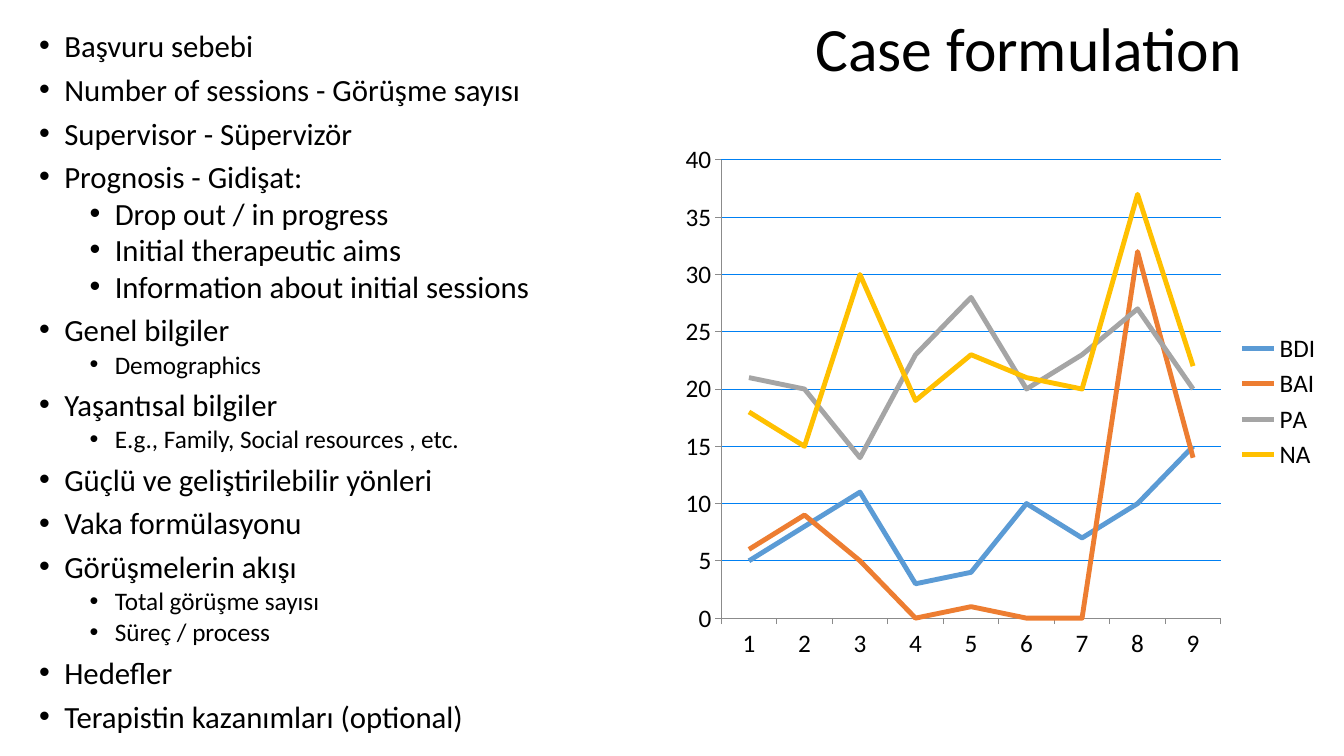
import pptx
import pptx.util
import pptx.chart.data
import pptx.dml.color
import pptx.enum.chart
import pptx.enum.text
import lxml.etree
from pptx.util import Inches

COLORS = {
    "text": "000000", "grid": "0080F3", "axis": "8B8B8B",
    "BDI": "5B9BD5", "BAI": "ED7D31", "PA": "A5A5A5", "NA": "FFC000",
}
FONT = "Calibri"


def rgb(name):
    return pptx.dml.color.RGBColor.from_string(COLORS[name])


def write(frame, text, size=22, level=0, bullet=False, line=0.8, before=0, align="LEFT"):
    paragraph = frame.paragraphs[0]
    if paragraph.runs:
        paragraph = frame.add_paragraph()
    paragraph.level = level
    paragraph.alignment = getattr(pptx.enum.text.PP_ALIGN, align)
    paragraph.line_spacing = line
    paragraph.space_before = pptx.util.Pt(before)
    run = paragraph.add_run()
    run.text = text
    run.font.size = pptx.util.Pt(size)
    run.font.name = FONT
    run.font.color.rgb = rgb("text")
    if bullet:
        properties = paragraph._p.get_or_add_pPr()
        properties.set("marL", str(Inches(0.25 + 0.5 * level)))
        properties.set("indent", str(Inches(-0.25)))
        namespace = "{http://schemas.openxmlformats.org/drawingml/2006/main}"
        lxml.etree.SubElement(properties, namespace + "buFont", typeface="Arial")
        lxml.etree.SubElement(properties, namespace + "buChar", char="•")


deck = pptx.Presentation()
deck.slide_width = Inches(13.33)
deck.slide_height = Inches(7.5)
slide = deck.slides.add_slide(deck.slide_layouts[6])

title = slide.shapes.add_textbox(Inches(0.92), Inches(0), Inches(11.5), Inches(1.02)).text_frame
title.word_wrap = True
title.vertical_anchor = pptx.enum.text.MSO_ANCHOR.MIDDLE
write(title, "Case formulation", size=44, line=0.9, align="RIGHT")

outline = [
    ("Başvuru sebebi", 0, 22),
    ("Number of sessions - Görüşme sayısı", 0, 22),
    ("Supervisor - Süpervizör", 0, 22),
    ("Prognosis - Gidişat:", 0, 22),
    ("Drop out / in progress", 1, 22),
    ("Initial therapeutic aims", 1, 22),
    ("Information about initial sessions", 1, 22),
    ("Genel bilgiler", 0, 22),
    ("Demographics", 1, 18),
    ("Yaşantısal bilgiler", 0, 22),
    ("E.g., Family, Social resources , etc.", 1, 18),
    ("Güçlü ve geliştirilebilir yönleri", 0, 22),
    ("Vaka formülasyonu", 0, 22),
    ("Görüşmelerin akışı", 0, 22),
    ("Total görüşme sayısı", 1, 18),
    ("Süreç / process", 1, 18),
    ("Hedefler", 0, 22),
    ("Terapistin kazanımları (optional)", 0, 22),
]
topics = slide.shapes.add_textbox(Inches(0.29), Inches(0.29), Inches(5.83), Inches(7.21)).text_frame
topics.word_wrap = True
for topic, level, size in outline:
    write(topics, topic, size=size, level=level, bullet=True, before=5 if level else 10)

scores = {
    "BDI": (5, 8, 11, 3, 4, 10, 7, 10, 15),
    "BAI": (6, 9, 5, 0, 1, 0, 0, 32, 14),
    "PA": (21, 20, 14, 23, 28, 20, 23, 27, 20),
    "NA": (18, 15, 30, 19, 23, 21, 20, 37, 22),
}
sessions = pptx.chart.data.CategoryChartData()
sessions.categories = [str(session) for session in range(1, 10)]
for scale, values in scores.items():
    sessions.add_series(scale, values)

progress = slide.shapes.add_chart(
    pptx.enum.chart.XL_CHART_TYPE.LINE,
    Inches(6.67), Inches(1.33), Inches(6.54), Inches(5.31), sessions,
).chart
progress.has_title = False
progress.font.size = pptx.util.Pt(18)
progress.font.name = FONT
progress.font.color.rgb = rgb("text")
progress.has_legend = True
progress.legend.position = pptx.enum.chart.XL_LEGEND_POSITION.RIGHT
progress.legend.include_in_layout = False
progress.plots[0].vary_by_categories = False

for axis in (progress.category_axis, progress.value_axis):
    axis.major_tick_mark = pptx.enum.chart.XL_TICK_MARK.OUTSIDE
    axis.minor_tick_mark = pptx.enum.chart.XL_TICK_MARK.NONE
    axis.format.line.color.rgb = rgb("axis")
    axis.format.line.width = pptx.util.Pt(0.75)
progress.value_axis.minimum_scale = 0
progress.value_axis.maximum_scale = 40
progress.value_axis.major_unit = 5
gridline = progress.value_axis.major_gridlines.format.line
gridline.color.rgb = rgb("grid")
gridline.width = pptx.util.Pt(0.75)

for scale in progress.plots[0].series:
    scale.smooth = False
    scale.marker.style = pptx.enum.chart.XL_MARKER_STYLE.NONE
    scale.format.line.color.rgb = rgb(scale.name)
    scale.format.line.width = pptx.util.Pt(3.5)

deck.save("out.pptx")
